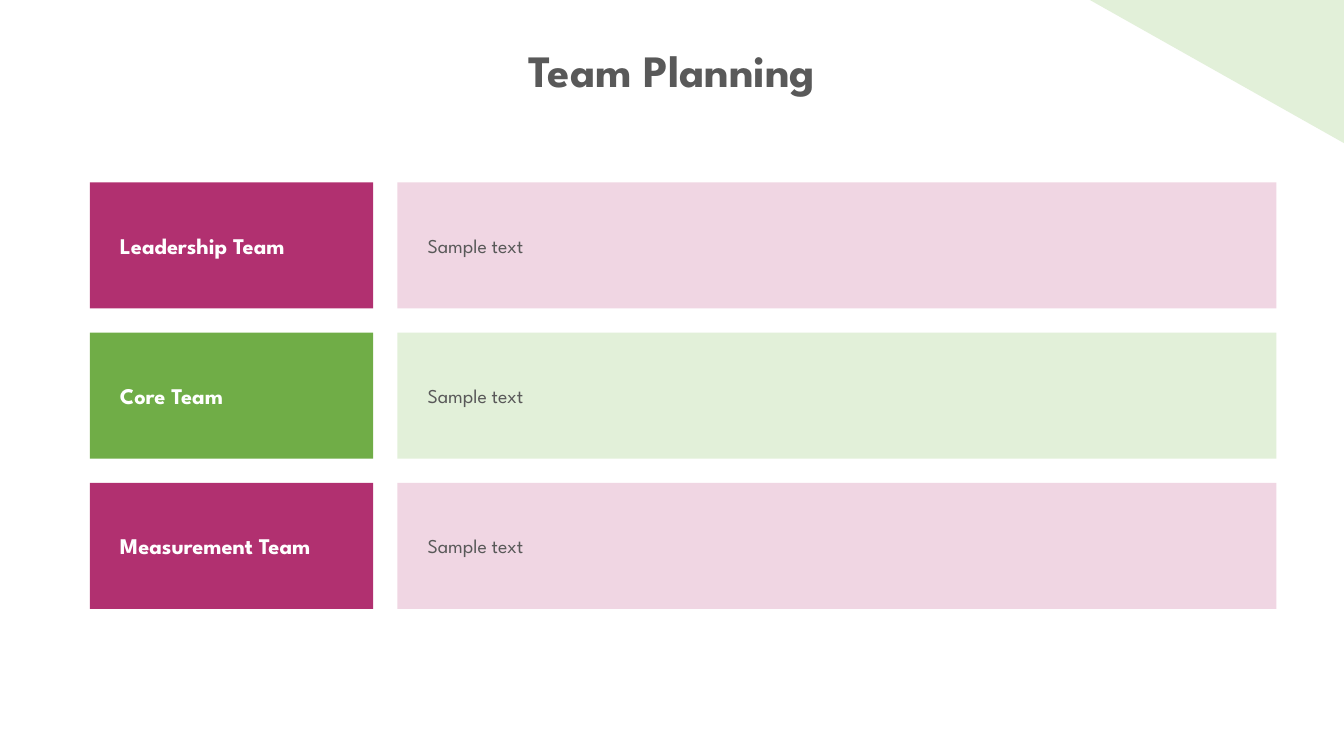
from pptx import Presentation
from pptx.dml.color import RGBColor
from pptx.enum.shapes import MSO_SHAPE as Shape
from pptx.enum.text import MSO_ANCHOR as Anchor, MSO_AUTO_SIZE as AutoSize, PP_ALIGN as Align
from pptx.util import Pt

PX = 9144
FONT = "League Spartan"
WHITE = RGBColor(0xFF, 0xFF, 0xFF)
GREY = RGBColor(0x59, 0x59, 0x59)
MAGENTA = RGBColor(0xB1, 0x30, 0x70)
PINK = RGBColor(0xF0, 0xD6, 0xE3)
GREEN = RGBColor(0x70, 0xAD, 0x47)
MINT = RGBColor(0xE2, 0xF0, 0xD9)

TEAMS = [
    ("Leadership Team", "Sample text", MAGENTA, PINK),
    ("Core Team", "Sample text", GREEN, MINT),
    ("Measurement Team", "Sample text", MAGENTA, PINK),
]


def scaled(box):
    """Turn a box of px lengths into EMU."""
    return [length * PX for length in box]


def set_text(shape, text, size, color, bold, align, anchor, insets):
    """Write one formatted paragraph with the given side and top insets."""
    frame = shape.text_frame
    frame.word_wrap = True
    frame.vertical_anchor = anchor
    side, top = scaled(insets)
    frame.margin_left = frame.margin_right = side
    frame.margin_top = frame.margin_bottom = top
    frame.text = text
    para = frame.paragraphs[0]
    para.alignment = align
    para.font.name = FONT
    para.font.size = Pt(size)
    para.font.bold = bold
    para.font.color.rgb = color


def add_block(page, kind, box, fill):
    """Add a flat shape without an outline."""
    shape = page.shapes.add_shape(kind, *scaled(box))
    shape.shadow.inherit = False
    shape.fill.solid()
    shape.fill.fore_color.rgb = fill
    shape.line.fill.background()
    return shape


def place_title(page, box, text):
    """Move the title placeholder into the box and fill it."""
    title = page.shapes.title
    title.left, title.top, title.width, title.height = scaled(box)
    set_text(title, text, 32, GREY, True, Align.CENTER, Anchor.TOP, (10, 5))
    title.text_frame.auto_size = AutoSize.SHAPE_TO_FIT_TEXT


def add_team_rows(page, box, teams, label_width=281, gap=24):
    """Stack one row per team, each a dark label beside a pale detail block."""
    left, top, width, height = box
    row_height = (height - gap * (len(teams) - 1)) // len(teams)
    detail_offset = label_width + gap
    for index, (name, detail, dark, pale) in enumerate(teams):
        row_top = top + index * (row_height + gap)
        label = add_block(page, Shape.RECTANGLE, (left, row_top, label_width, row_height), dark)
        set_text(label, name, 16, WHITE, True, Align.LEFT, Anchor.MIDDLE, (30, 30))
        body_box = (left + detail_offset, row_top, width - detail_offset, row_height)
        body = add_block(page, Shape.RECTANGLE, body_box, pale)
        set_text(body, detail, 14, GREY, False, Align.LEFT, Anchor.MIDDLE, (30, 20))


def add_corner(page, box):
    """Fill the top right corner of the page with a triangle."""
    corner = add_block(page, Shape.RIGHT_TRIANGLE, box, MINT)
    corner.rotation = 180


def main():
    """Build and save the team planning slide."""
    deck = Presentation()
    deck.slide_width, deck.slide_height = scaled((1333, 750))
    page = deck.slides.add_slide(deck.slide_layouts[5])
    place_title(page, (312, 37, 709, 64), "Team Planning")
    add_team_rows(page, (89, 181, 1177, 423), TEAMS)
    add_corner(page, (1081, 0, 252, 142))
    deck.save("out.pptx")


if __name__ == "__main__":
    main()
